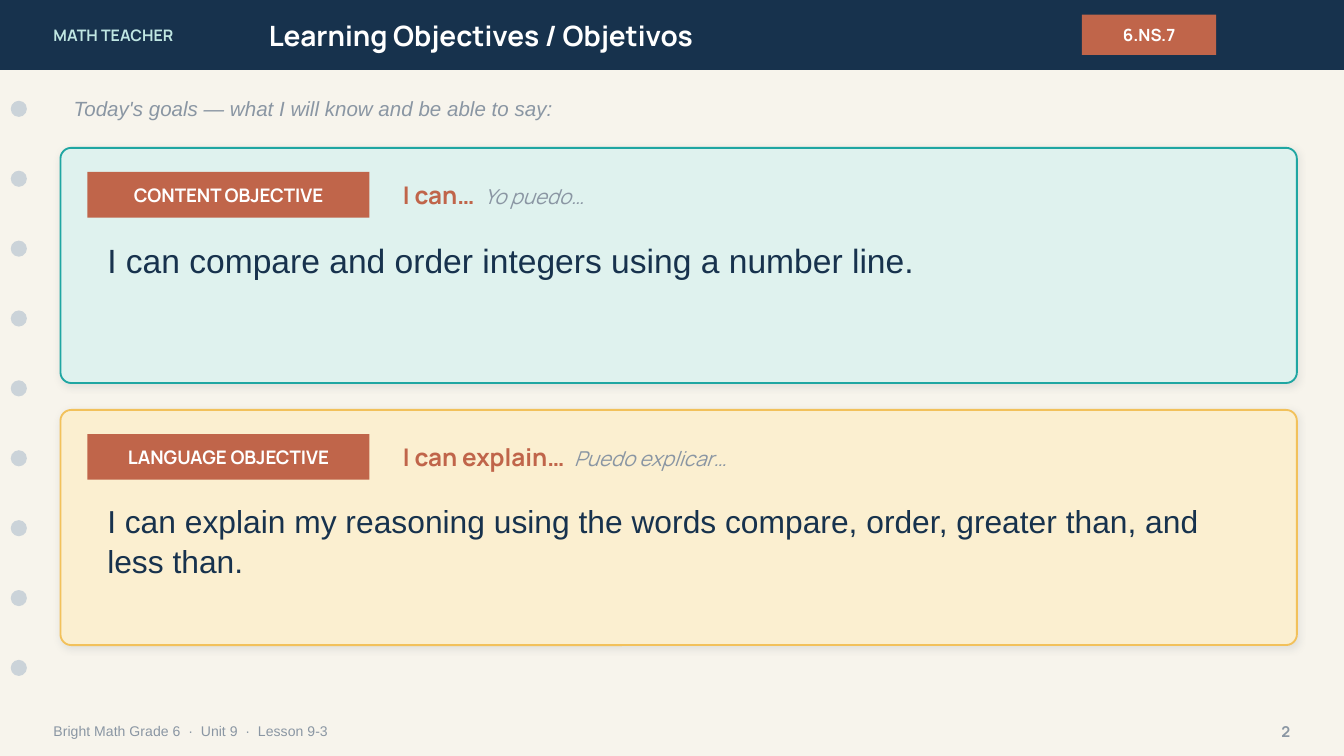
"""Build a learning objectives slide on a grid of tenths of an inch."""
from dataclasses import dataclass

from lxml import etree
from pptx import Presentation
from pptx.dml.color import RGBColor
from pptx.enum.shapes import MSO_SHAPE
from pptx.enum.text import MSO_ANCHOR, MSO_AUTO_SIZE, PP_ALIGN
from pptx.oxml.ns import qn
from pptx.shapes.autoshape import Shape
from pptx.slide import Slide
from pptx.util import Inches, Pt

RECTANGLE = MSO_SHAPE.RECTANGLE
ROUNDED = MSO_SHAPE.ROUNDED_RECTANGLE
OVAL = MSO_SHAPE.OVAL
TOP, MIDDLE = MSO_ANCHOR.TOP, MSO_ANCHOR.MIDDLE
LEFT, CENTER, RIGHT = PP_ALIGN.LEFT, PP_ALIGN.CENTER, PP_ALIGN.RIGHT
NO_AUTOFIT = MSO_AUTO_SIZE.NONE

CELL = Inches(0.1)
COLUMNS, ROWS = 100, 56.25
HEADER_ROWS = 5.2
DOT_COUNT, DOT_SIZE, DOT_PITCH = 9, 1.2, 5.2
CARD_TOP, CARD_PITCH = 11, 19.5
HEADING, BODY = "Manrope", "Arial"
COLORS = {
    "paper": "F7F4EC", "navy": "17324D", "mint": "BFE6E2", "white": "FFFFFF",
    "rust": "C0654A", "dot": "CBD3D9", "gray": "8A96A3", "shadow": "1C2E42",
    "teal": "1FA6A2", "teal_tint": "DFF2EE",
    "gold": "F2C15B", "gold_tint": "FBEFD0",
}


@dataclass(frozen=True)
class Area:
    """A rectangle in grid columns and rows."""
    column: float
    row: float
    columns: float
    rows: float

    def lengths(self) -> list[int]:
        """Return left, top, width and height as slide lengths."""
        return [round(value * CELL) for value in
                (self.column, self.row, self.columns, self.rows)]


@dataclass(frozen=True)
class Style:
    """The look of a piece of text."""
    size: float
    color: str
    name: str = HEADING
    bold: bool = False
    italic: bool = False


@dataclass(frozen=True)
class Objective:
    """One objective card."""
    label: str
    starter: str
    translation: str
    goal: str
    goal_size: float
    fill: str
    border: str


OBJECTIVES = (
    Objective("CONTENT OBJECTIVE", "I can…  ", "Yo puedo…",
              "I can compare and order integers using a number line.",
              18, "teal_tint", "teal"),
    Objective("LANGUAGE OBJECTIVE", "I can explain…  ", "Puedo explicar…",
              "I can explain my reasoning using the words compare, order, "
              "greater than, and less than.",
              17, "gold_tint", "gold"),
)


def rgb(color: str) -> RGBColor:
    """Look up a named color."""
    return RGBColor.from_string(COLORS[color])


def apply_style(font, style: Style) -> None:
    """Set a paragraph or run font."""
    font.name, font.size = style.name, Pt(style.size)
    font.bold, font.italic = style.bold, style.italic
    font.color.rgb = rgb(style.color)


def write(shape: Shape, pieces: list[tuple[str, Style]], align=LEFT,
          anchor=MIDDLE, line_spacing: float = 1.0) -> None:
    """Fill a shape with one paragraph of styled pieces."""
    frame = shape.text_frame
    frame.word_wrap, frame.auto_size = True, NO_AUTOFIT
    frame.vertical_anchor = anchor
    paragraph = frame.paragraphs[0]
    paragraph.alignment, paragraph.line_spacing = align, line_spacing
    for text, style in pieces:
        run = paragraph.add_run()
        run.text = text
        apply_style(paragraph.font if len(pieces) == 1 else run.font, style)


def add_text(slide: Slide, area: Area, pieces: list[tuple[str, Style]],
             **layout) -> Shape:
    """Add a text box."""
    shape = slide.shapes.add_textbox(*area.lengths())
    write(shape, pieces, **layout)
    return shape


def add_block(slide: Slide, kind: MSO_SHAPE, area: Area, fill: str) -> Shape:
    """Add a filled shape without border or shadow."""
    shape = slide.shapes.add_shape(kind, *area.lengths())
    shape.shadow.inherit = False
    shape.fill.solid()
    shape.fill.fore_color.rgb = rgb(fill)
    shape.line.fill.background()
    return shape


def add_badge(slide: Slide, area: Area, text: str, size: float) -> None:
    """Add a rust label with centered text."""
    badge = add_block(slide, RECTANGLE, area, "rust")
    write(badge, [(text, Style(size, "white", bold=True))], align=CENTER)


def add_soft_shadow(shape: Shape) -> None:
    """Give a shape a faint shadow below it."""
    effects = shape.element.spPr.find(qn("a:effectLst"))
    shadow = etree.SubElement(effects, qn("a:outerShdw"), blurRad=str(Pt(4)),
                              dist=str(Pt(1)), dir="5400000", rotWithShape="0")
    color = etree.SubElement(shadow, qn("a:srgbClr"), val=COLORS["shadow"])
    etree.SubElement(color, qn("a:alpha"), val="10000")


def add_header(slide: Slide) -> None:
    """Draw the top bar with the series name, title and standard."""
    bar = add_block(slide, RECTANGLE, Area(0, 0, COLUMNS, HEADER_ROWS), "navy")
    series = add_text(slide, Area(3, 0, 24, HEADER_ROWS),
                      [("MATH TEACHER", Style(8.5, "mint", bold=True))])
    for properties in series.element.iter(qn("a:rPr")):
        properties.set("spc", "100")
    title = slide.shapes.title
    title.left, title.top, title.width, title.height = Area(
        19, 0, 56, HEADER_ROWS).lengths()
    write(title, [("Learning Objectives / Objetivos",
                   Style(15, "white", bold=True))])
    bar.element.addnext(title.element)
    add_badge(slide, Area(80.5, 1.1, 10, 3), "6.NS.7", 9)


def add_objective(slide: Slide, objective: Objective, row: float) -> None:
    """Draw one objective card."""
    card = add_block(slide, ROUNDED, Area(4.5, row, 92, 17.5), objective.fill)
    card.adjustments[0] = 0.046
    card.line.color.rgb = rgb(objective.border)
    card.line.width = Pt(1)
    add_soft_shadow(card)
    add_badge(slide, Area(6.5, row + 1.8, 21, 3.4), objective.label, 10)
    add_text(slide, Area(29, row + 1.8, 66, 3.4), [
        (objective.starter, Style(13, "rust", bold=True)),
        (objective.translation, Style(11, "gray", italic=True))])
    add_text(slide, Area(7, row + 6.2, 87, 10),
             [(objective.goal, Style(objective.goal_size, "navy", BODY))],
             anchor=TOP, line_spacing=1.05)


def main() -> None:
    """Build and save the slide."""
    presentation = Presentation()
    presentation.slide_width = round(COLUMNS * CELL)
    presentation.slide_height = round(ROWS * CELL)
    layout = presentation.slide_layouts.get_by_name("Title Only")
    slide = presentation.slides.add_slide(layout)
    slide.background.fill.solid()
    slide.background.fill.fore_color.rgb = rgb("paper")

    add_header(slide)
    for index in range(DOT_COUNT):
        row = 7.5 + index * DOT_PITCH
        add_block(slide, OVAL, Area(0.8, row, DOT_SIZE, DOT_SIZE), "dot")
    add_text(slide, Area(3, 53, 70, 2.8),
             [("Bright Math Grade 6  ·  Unit 9  ·  Lesson 9-3",
               Style(7.5, "gray", BODY))])
    add_text(slide, Area(92, 53, 5, 2.8),
             [("2", Style(8, "gray", bold=True))], align=RIGHT)
    add_text(slide, Area(4.5, 6.6, 92, 3),
             [("Today's goals — what I will know and be able to say:",
               Style(11, "gray", BODY, italic=True))])
    for index, objective in enumerate(OBJECTIVES):
        add_objective(slide, objective, CARD_TOP + index * CARD_PITCH)
    presentation.save("out.pptx")


if __name__ == "__main__":
    main()
